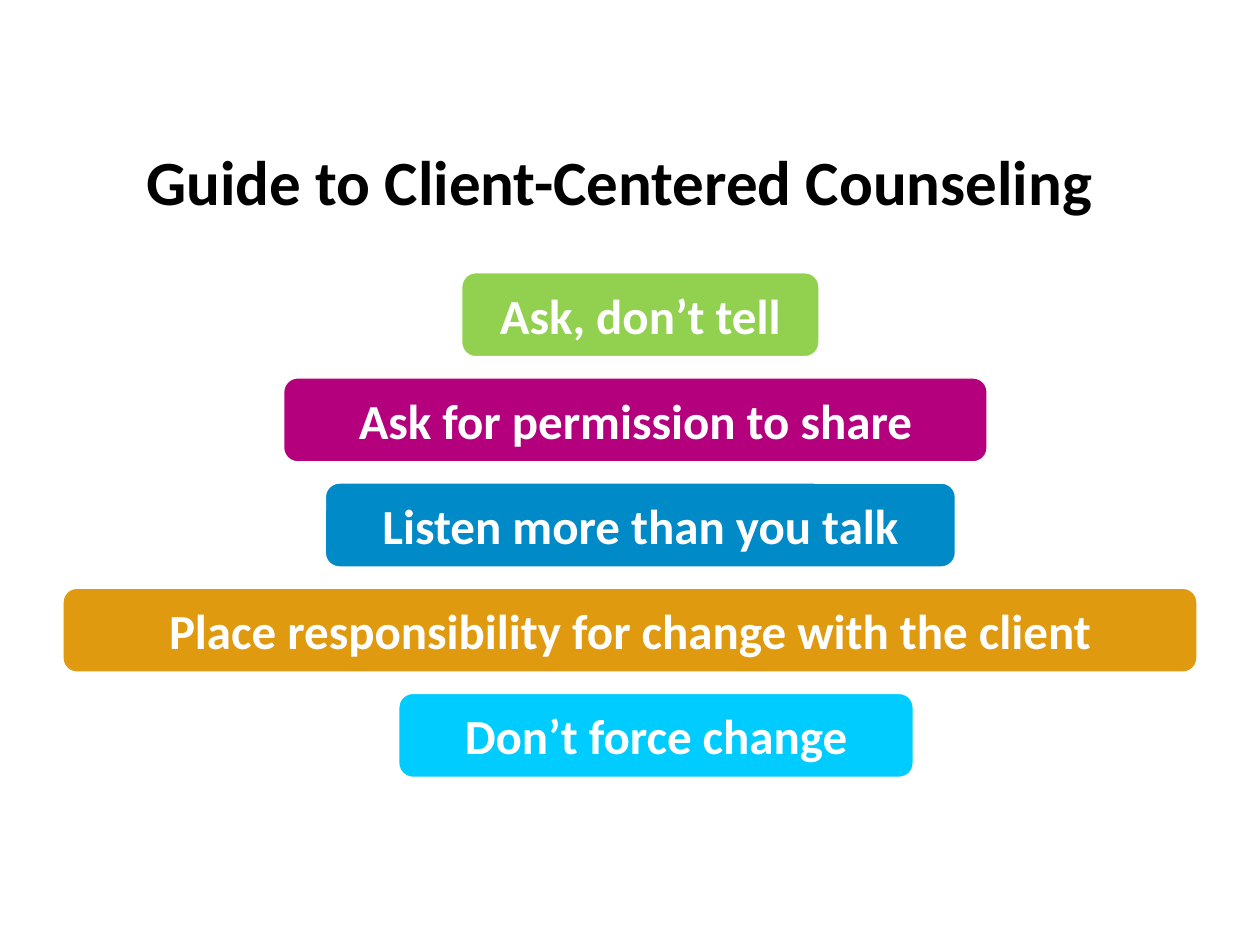
"""Build a slide of five counseling tips under a title."""
from pptx import Presentation
from pptx.dml.color import RGBColor
from pptx.enum.shapes import MSO_SHAPE
from pptx.enum.text import MSO_ANCHOR, MSO_AUTO_SIZE, PP_ALIGN
from pptx.util import Cm, Pt

ROUND = MSO_SHAPE.ROUNDED_RECTANGLE
TOP = MSO_ANCHOR.TOP
MIDDLE = MSO_ANCHOR.MIDDLE
FIXED = MSO_AUTO_SIZE.NONE
CENTER = PP_ALIGN.CENTER

BLACK = RGBColor(0x00, 0x00, 0x00)
WHITE = RGBColor(0xFF, 0xFF, 0xFF)
GREEN = RGBColor(0x92, 0xD0, 0x50)
PURPLE = RGBColor(0xB4, 0x00, 0x7C)
BLUE = RGBColor(0x00, 0x8A, 0xC8)
GOLD = RGBColor(0xDF, 0x9A, 0x0F)
CYAN = RGBColor(0x00, 0xCC, 0xFF)

TIPS = [
    ("Ask, don’t tell", 9.31, 7.2, GREEN),
    ("Ask for permission to share", 5.72, 14.18, PURPLE),
    ("Listen more than you talk", 6.56, 12.7, BLUE),
    ("Place responsibility for change with the client", 1.27, 22.86, GOLD),
    ("Don’t force change", 8.04, 10.37, CYAN),
]
START, STEP, HEIGHT = 5.5, 2.12, 1.69


def write(shape, text, size, color, anchor):
    frame = shape.text_frame
    frame.word_wrap = True
    frame.auto_size = FIXED
    frame.vertical_anchor = anchor
    line = frame.paragraphs[0]
    line.alignment = CENTER
    run = line.add_run()
    run.text = text
    run.font.name = "Calibri"
    run.font.size = Pt(size)
    run.font.bold = True
    run.font.color.rgb = color


deck = Presentation()
deck.slide_width = Cm(25.4)
deck.slide_height = Cm(19.05)
slide = deck.slides.add_slide(deck.slide_layouts[5])

title = slide.shapes.title
title.left, title.top = Cm(1.06), Cm(2.75)
title.width, title.height = Cm(22.86), Cm(2.33)
write(title, "Guide to Client-Centered Counseling", 36, BLACK, TOP)

for row, (text, left, width, fill) in enumerate(TIPS):
    top = START + row * STEP
    tip = slide.shapes.add_shape(ROUND, Cm(left), Cm(top), Cm(width), Cm(HEIGHT))
    tip.shadow.inherit = False
    tip.fill.solid()
    tip.fill.fore_color.rgb = fill
    tip.line.color.rgb = WHITE
    tip.line.width = Pt(0.75)
    write(tip, text, 28, WHITE, MIDDLE)

deck.save("out.pptx")
